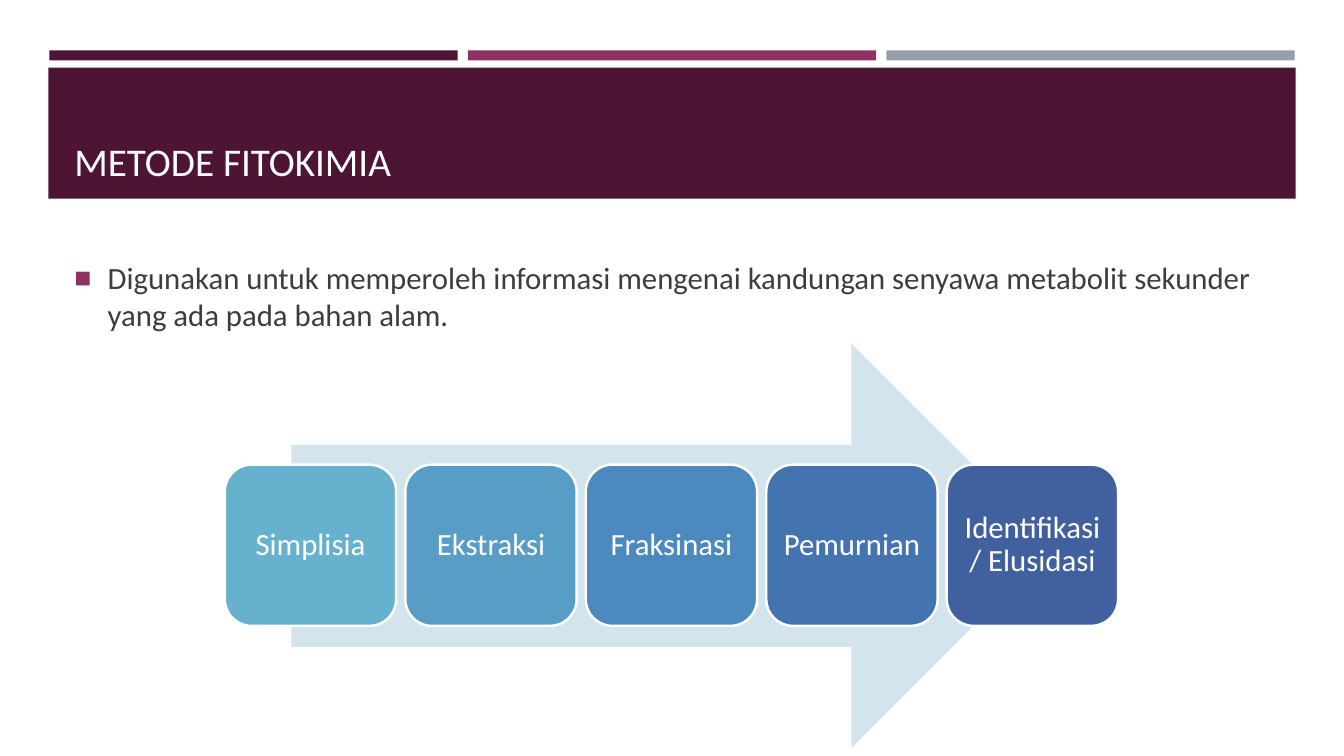
from lxml import etree
from pptx import Presentation
from pptx.dml.color import RGBColor
from pptx.enum.shapes import MSO_SHAPE
from pptx.enum.text import MSO_ANCHOR, PP_ALIGN
from pptx.oxml.ns import qn
from pptx.util import Inches, Pt

TITLE = "METODE FITOKIMIA"
PURPOSE = ("Digunakan untuk memperoleh informasi mengenai kandungan senyawa "
           "metabolit sekunder yang ada pada bahan alam.")
STEPS = [
    ("Simplisia", "66B1CE"),
    ("Ekstraksi", "589DC6"),
    ("Fraksinasi", "4B89BE"),
    ("Pemurnian", "4374AF"),
    ("Identifikasi / Elusidasi", "40619D"),
]
COLORS = {"plum": "4D1434", "magenta": "903163", "gray": "969FA7",
          "arrow": "D3E4ED", "body": "3D3D3D", "white": "FFFFFF"}
STRIPES = ["plum", "magenta", "gray"]
FONT = "Calibri"

STRIPE_LEFT, STRIPE_WIDTH, STRIPE_PITCH = 0.49, 4.05, 4.15
STEP_LEFT, STEP_WIDTH, STEP_PITCH = 2.23, 1.7, 1.79

presentation = Presentation()
presentation.slide_width = Inches(13.33)
presentation.slide_height = Inches(7.5)
slide = presentation.slides.add_slide(presentation.slide_layouts[6])


def add_filled(kind, left, top, width, height, color):
    shape = slide.shapes.add_shape(
        kind, Inches(left), Inches(top), Inches(width), Inches(height))
    shape.shadow.inherit = False
    shape.fill.solid()
    shape.fill.fore_color.rgb = RGBColor.from_string(color)
    shape.line.fill.background()
    return shape


def write(frame, text, size, color, anchor):
    """Fill a text frame with one wrapped paragraph and return it."""
    frame.word_wrap = True
    frame.vertical_anchor = anchor
    frame.text = text
    paragraph = frame.paragraphs[0]
    font = paragraph.runs[0].font
    font.name, font.size = FONT, Pt(size)
    font.color.rgb = RGBColor.from_string(color)
    return paragraph


def add_text(left, top, width, height, *text_settings):
    box = slide.shapes.add_textbox(
        Inches(left), Inches(top), Inches(width), Inches(height))
    return write(box.text_frame, *text_settings)


def add_square_bullet(paragraph, color, indent):
    properties = paragraph._p.get_or_add_pPr()
    properties.set("marL", str(Inches(indent)))
    properties.set("indent", str(-Inches(indent)))
    bullet_color = etree.SubElement(properties, qn("a:buClr"))
    etree.SubElement(bullet_color, qn("a:srgbClr"), val=color)
    etree.SubElement(properties, qn("a:buSzPct"), val="92000")
    etree.SubElement(properties, qn("a:buFont"), typeface="Arial")
    etree.SubElement(properties, qn("a:buChar"), char="■")


for index, stripe in enumerate(STRIPES):
    add_filled(MSO_SHAPE.RECTANGLE, STRIPE_LEFT + index * STRIPE_PITCH, 0.5,
               STRIPE_WIDTH, 0.1, COLORS[stripe])
add_filled(MSO_SHAPE.RECTANGLE, 0.48, 0.67, 12.37, 1.3, COLORS["plum"])
add_text(0.64, 0.77, 12.06, 1.11, TITLE, 28, COLORS["white"], MSO_ANCHOR.BOTTOM)

purpose = add_text(0.64, 2.38, 12.06, 1.11, PURPOSE, 22, COLORS["body"],
                   MSO_ANCHOR.MIDDLE)
add_square_bullet(purpose, COLORS["magenta"], 0.33)

add_filled(MSO_SHAPE.RIGHT_ARROW, 2.89, 3.41, 7.56, 4.01, COLORS["arrow"])
for index, (step, color) in enumerate(STEPS):
    card = add_filled(MSO_SHAPE.ROUNDED_RECTANGLE, STEP_LEFT + index * STEP_PITCH,
                      4.61, STEP_WIDTH, 1.6, color)
    card.line.color.rgb = RGBColor.from_string(COLORS["white"])
    card.line.width = Pt(1.75)
    frame = card.text_frame
    frame.margin_left = frame.margin_right = Inches(0.09)
    frame.margin_top = frame.margin_bottom = Inches(0.09)
    label = write(frame, step, 22, COLORS["white"], MSO_ANCHOR.MIDDLE)
    label.alignment = PP_ALIGN.CENTER
    label.line_spacing = 0.9

presentation.save("out.pptx")
